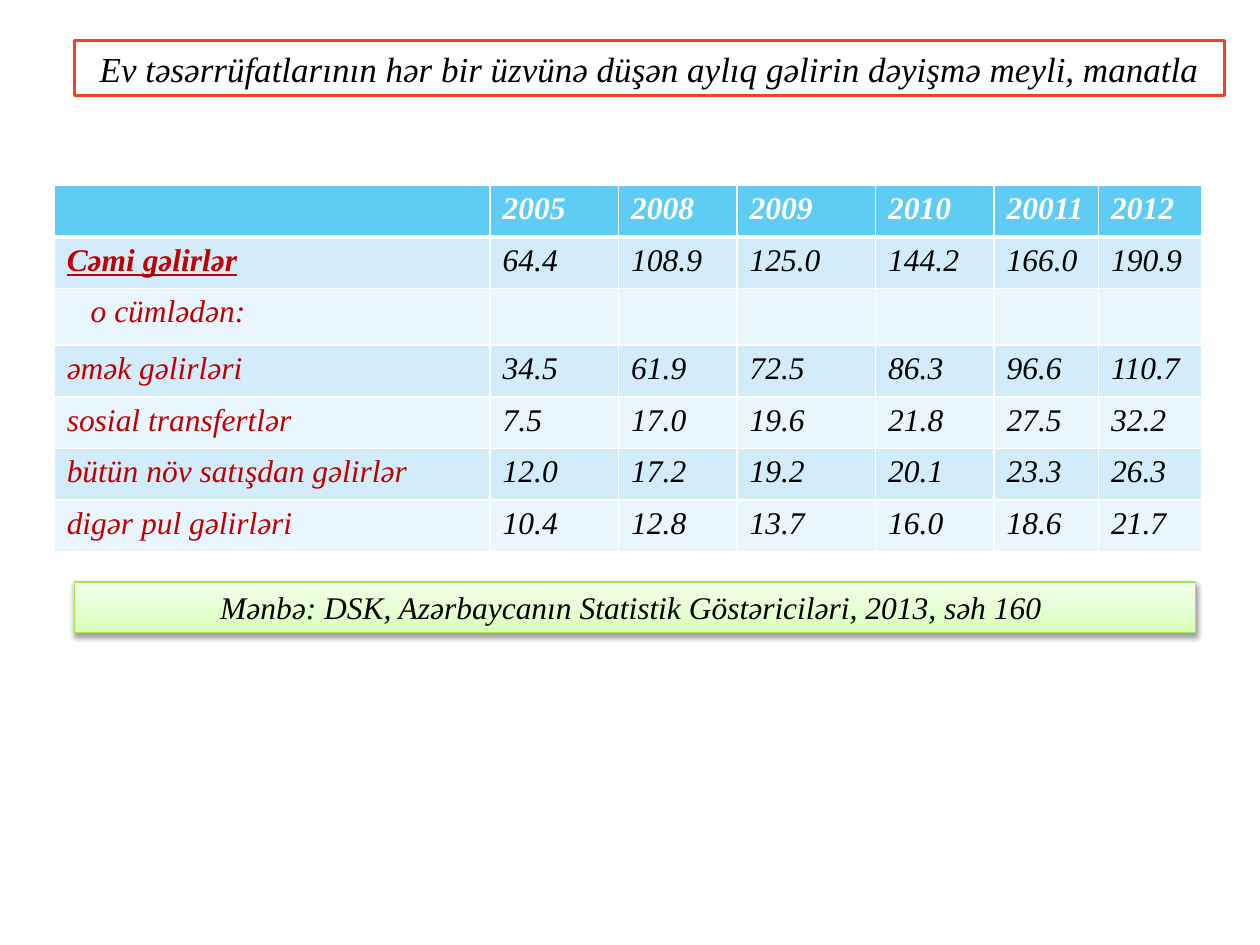
import copy

import pptx
import pptx.dml.color
import pptx.enum.shapes
import pptx.enum.text
import pptx.oxml
import pptx.oxml.ns
import pptx.util

Inches = pptx.util.Inches
Pt = pptx.util.Pt
RGB = pptx.dml.color.RGBColor.from_string
NS = pptx.oxml.ns.nsdecls("a")

THEME = {
    "font": "Times New Roman",
    "title_size": 20,
    "body_size": 18,
    "text": "000000",
    "white": "FFFFFF",
    "label": "C00000",
    "header": "5ECCF3",
    "bands": ("D2ECFA", "EAF6FD"),
    "title_line": "F14124",
    "source_line": "A4E94C",
    "source_stops": ((0, "D8FFB8"), (0.35, "E3FFCD"), (1, "F4FFEC")),
}

TITLE = "Ev təsərrüfatlarının hər bir üzvünə düşən aylıq gəlirin dəyişmə meyli, manatla"
SOURCE = "Mənbə: DSK, Azərbaycanın Statistik Göstəriciləri, 2013, səh 160 "
INCOME = [
    ["", "2005", "2008", "2009", "2010", "20011", "2012"],
    ["Cəmi gəlirlər", "64.4", "108.9", "125.0", "144.2", "166.0", "190.9"],
    ["o cümlədən:", "", "", "", "", "", ""],
    ["əmək gəlirləri", "34.5", "61.9", "72.5", "86.3", "96.6", "110.7"],
    ["sosial transfertlər", "7.5", "17.0", "19.6", "21.8", "27.5", "32.2"],
    ["bütün növ satışdan gəlirlər", "12.0", "17.2", "19.2", "20.1", "23.3", "26.3"],
    ["digər pul gəlirləri", "10.4", "12.8", "13.7", "16.0", "18.6", "21.7"],
]
COL_WIDTHS = [3.46, 1.02, 0.94, 1.1, 0.94, 0.83, 0.82]
ROW_HEIGHTS = [0.41, 0.41, 0.45, 0.41, 0.41, 0.41, 0.41]
TOTAL_ROW, SUBHEAD_ROW = 1, 2


class SlideBuilder:
    def __init__(self, prs, theme):
        self.theme = theme
        self.s = prs.slides.add_slide(prs.slide_layouts[6])

    def add_text(self, tf, text, color, size, **formats):
        p = tf.paragraphs[0]
        r = p.add_run()
        r.text = text
        formats = {"name": self.theme["font"], "size": Pt(size), "italic": True, **formats}
        for name, value in formats.items():
            setattr(r.font, name, value)
        r.font.color.rgb = RGB(color)
        return p

    def box(self, at, text, size, line, width):
        sp = self.s.shapes.add_shape(
            pptx.enum.shapes.MSO_SHAPE.RECTANGLE, *map(Inches, at))
        sp.shadow.inherit = False
        sp.fill.solid()
        sp.fill.fore_color.rgb = RGB(self.theme["white"])
        sp.line.color.rgb = RGB(line)
        sp.line.width = Pt(width)
        tf = sp.text_frame
        tf.word_wrap = True
        tf.auto_size = pptx.enum.text.MSO_AUTO_SIZE.SHAPE_TO_FIT_TEXT
        p = self.add_text(tf, text, self.theme["text"], size)
        p.alignment = pptx.enum.text.PP_ALIGN.CENTER
        return sp

    def gradient(self, sp, stops, angle):
        sp.fill.gradient()
        sp.fill.gradient_angle = angle
        stop_list = sp._element.spPr.find(".//" + pptx.oxml.ns.qn("a:gsLst"))
        while len(stop_list) < len(stops):
            stop_list.append(copy.deepcopy(stop_list[0]))
        for stop, (position, color) in zip(sp.fill.gradient_stops, stops):
            stop.position = position
            stop.color.rgb = RGB(color)

    def drop_shadow(self, sp):
        effects = sp._element.spPr.find(pptx.oxml.ns.qn("a:effectLst"))
        effects.append(pptx.oxml.parse_xml(
            f'<a:outerShdw {NS} blurRad="{Pt(3.1)}" dist="{Pt(1.6)}" dir="5400000" '
            'rotWithShape="0"><a:srgbClr val="000000"><a:alpha val="38000"/>'
            '</a:srgbClr></a:outerShdw>'))

    def borders(self, cell, **widths):
        tc_pr = cell._tc.get_or_add_tcPr()
        for i, side in enumerate("LRTB"):
            tc_pr.insert(i, pptx.oxml.parse_xml(
                f'<a:ln{side} {NS} w="{Pt(widths.get(side, 1))}"><a:solidFill>'
                f'<a:srgbClr val="{self.theme["white"]}"/></a:solidFill></a:ln{side}>'))

    def cell_style(self, row, col):
        """Return fill, text colour and font formats for a cell."""
        t = self.theme
        if row == 0:
            return t["header"], t["white"], {"bold": True}
        total = row == TOTAL_ROW and col == 0
        color = t["label"] if col == 0 else t["text"]
        return t["bands"][(row - 1) % 2], color, {"bold": total, "underline": total}

    def table(self, left, top, rows):
        table = self.s.shapes.add_table(
            len(rows), len(rows[0]), Inches(left), Inches(top),
            Inches(sum(COL_WIDTHS)), Inches(sum(ROW_HEIGHTS))).table
        for column, width in zip(table.columns, COL_WIDTHS):
            column.width = Inches(width)
        for i, values in enumerate(rows):
            table.rows[i].height = Inches(ROW_HEIGHTS[i])
            for j, text in enumerate(values):
                cell = table.cell(i, j)
                fill, color, formats = self.cell_style(i, j)
                cell.fill.solid()
                cell.fill.fore_color.rgb = RGB(fill)
                # The rule under the header is thicker
                self.borders(cell, B=3 if i == 0 else 1, T=3 if i == 1 else 1)
                if text:
                    self.add_text(cell.text_frame, text, color, self.theme["body_size"], **formats)
        table.cell(SUBHEAD_ROW, 0).margin_left = Inches(0.29)


def main():
    prs = pptx.Presentation()
    prs.slide_width, prs.slide_height = Inches(10), Inches(7.5)
    slide = SlideBuilder(prs, THEME)

    # Income table
    slide.table(0.43, 1.47, INCOME)

    # Title
    slide.box((0.59, 0.32, 9.13, 0.44), TITLE, THEME["title_size"], THEME["title_line"], 2)

    # Source note
    sp = slide.box((0.59, 4.62, 8.9, 0.4), SOURCE, THEME["body_size"],
                   THEME["source_line"], 0.75)
    slide.gradient(sp, THEME["source_stops"], 90)
    slide.drop_shadow(sp)

    prs.save("out.pptx")


if __name__ == "__main__":
    main()
